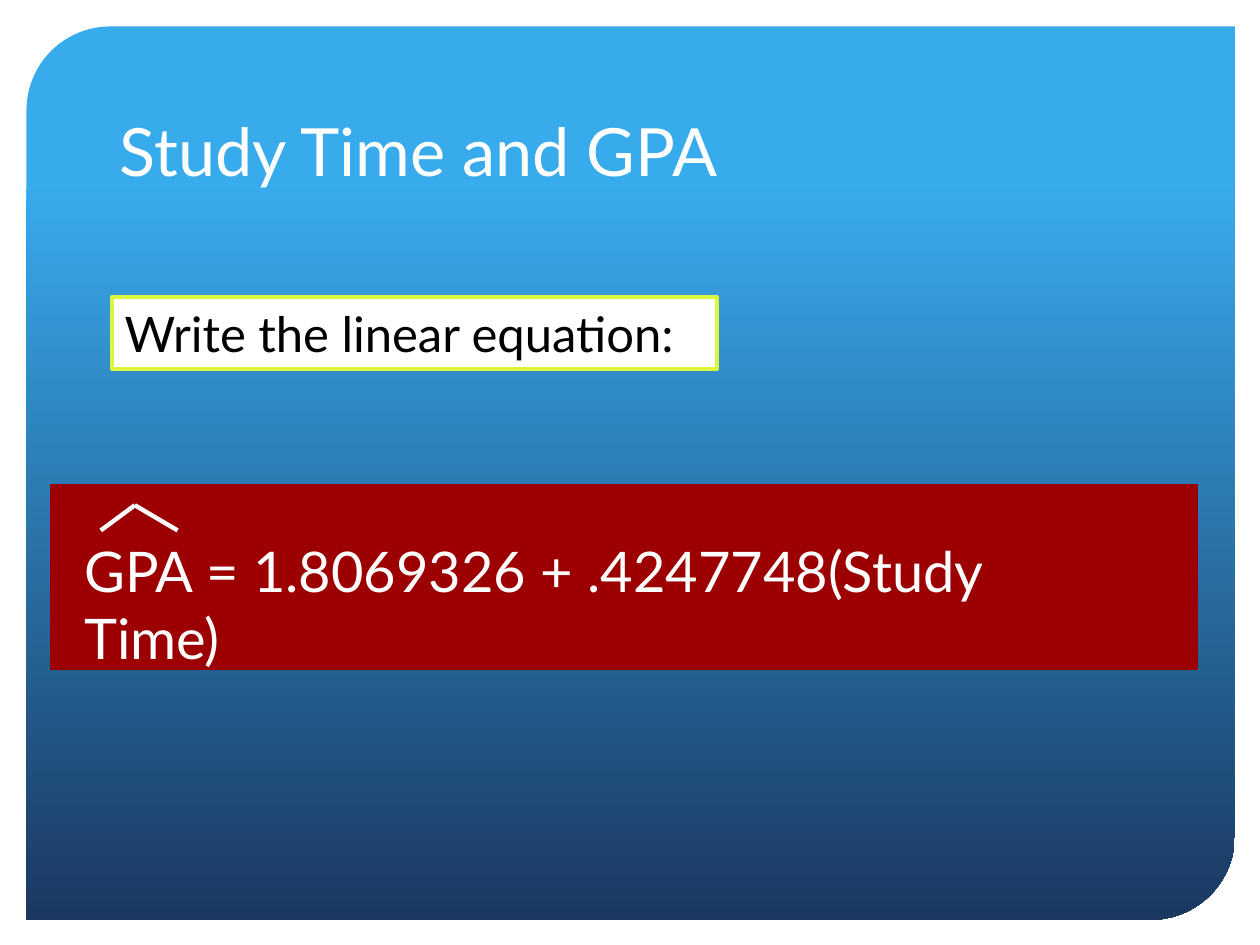
from lxml.etree import SubElement
from pptx import Presentation
from pptx.dml.color import RGBColor
from pptx.enum.shapes import MSO_CONNECTOR as Connector, MSO_SHAPE as Shape
from pptx.enum.text import MSO_ANCHOR as Anchor, MSO_AUTO_SIZE as AutoSize, PP_ALIGN as Align
from pptx.oxml.ns import qn
from pptx.util import Inches, Pt

FONT = "Lato"
WHITE = "FFFFFF"
RED = "9C0001"


def color(value):
    """Turn a hex string into a colour."""
    return RGBColor.from_string(value)


def inches(*lengths):
    """Turn plain numbers into lengths."""
    return [Inches(length) for length in lengths]


def add_panel(page, box, fill, line=None, width=0, kind=Shape.RECTANGLE):
    """Add a filled shape, outlined when a line colour is given."""
    panel = page.shapes.add_shape(kind, *inches(*box))
    panel.shadow.inherit = False
    panel.fill.solid()
    panel.fill.fore_color.rgb = color(fill)
    if line:
        panel.line.color.rgb = color(line)
        panel.line.width = Pt(width)
    else:
        panel.line.fill.background()
    return panel


def write(shape, text, size, ink, anchor=Anchor.TOP):
    """Write one left-aligned line of text into a shape."""
    frame = shape.text_frame
    frame.word_wrap = True
    frame.auto_size = AutoSize.NONE
    frame.vertical_anchor = anchor
    para = frame.paragraphs[0]
    para.alignment = Align.LEFT
    span = para.add_run()
    span.text = text
    span.font.name = FONT
    span.font.size = Pt(size)
    span.font.color.rgb = color(ink)


def add_backdrop(page, box):
    """Add the gradient panel with two rounded corners."""
    backdrop = add_panel(page, box, WHITE, kind=Shape.ROUND_2_DIAG_RECTANGLE)
    backdrop.adjustments[0] = 0.094
    backdrop.adjustments[1] = 0
    backdrop.fill.gradient()
    backdrop.fill.gradient_angle = 270
    stops = [(0.17, "38ABED"), (1, "1B3861")]
    for stop, (position, shade) in zip(backdrop.fill.gradient_stops, stops):
        stop.color.rgb = color(shade)
        stop.position = position


def place_title(page, box, text):
    """Place the title in front of the panels already on the page."""
    title = page.shapes.title
    title.left, title.top, title.width, title.height = inches(*box)
    title.element.getparent().append(title.element)
    write(title, text, 38, WHITE, Anchor.BOTTOM)


def add_prompt(page, box, text):
    """Add the outlined instruction."""
    write(add_panel(page, box, WHITE, "DDF53D", 2.5), text, 28, "000000")


def add_equation(page, box, text):
    """Add the equation with a hat over its first word."""
    left, top, _, _ = box
    write(add_panel(page, box, RED), text, 32, WHITE)
    peak = (left + 0.5, top - 0.2)
    add_stroke(page, (left + 0.23, top), peak)
    add_stroke(page, peak, (left + 0.84, top))


def add_stroke(page, start, end):
    """Add one white stroke of the hat."""
    stroke = page.shapes.add_connector(Connector.STRAIGHT, *inches(*start, *end))
    stroke.line.color.rgb = color(WHITE)
    stroke.line.width = Pt(2.5)
    SubElement(stroke.element.spPr, qn("a:effectLst"))


def main():
    """Build and save the deck."""
    deck = Presentation()
    deck.slide_width, deck.slide_height = inches(10, 7.5)
    page = deck.slides.add_slide(deck.slide_layouts[5])
    add_backdrop(page, (0.21, 0.21, 9.59, 7.09))
    add_panel(page, (0.4, 3.85, 9.1, 1.46), RED, "990001", 0.75)
    place_title(page, (0.85, 0.42, 8.29, 1.14), "Study Time and GPA")
    add_prompt(page, (0.89, 2.36, 4.8, 0.57), "Write the linear equation:")
    add_equation(page, (0.57, 4.21, 8.37, 0.64), "GPA = 1.8069326 + .4247748(Study Time)")
    deck.save("out.pptx")


if __name__ == "__main__":
    main()
